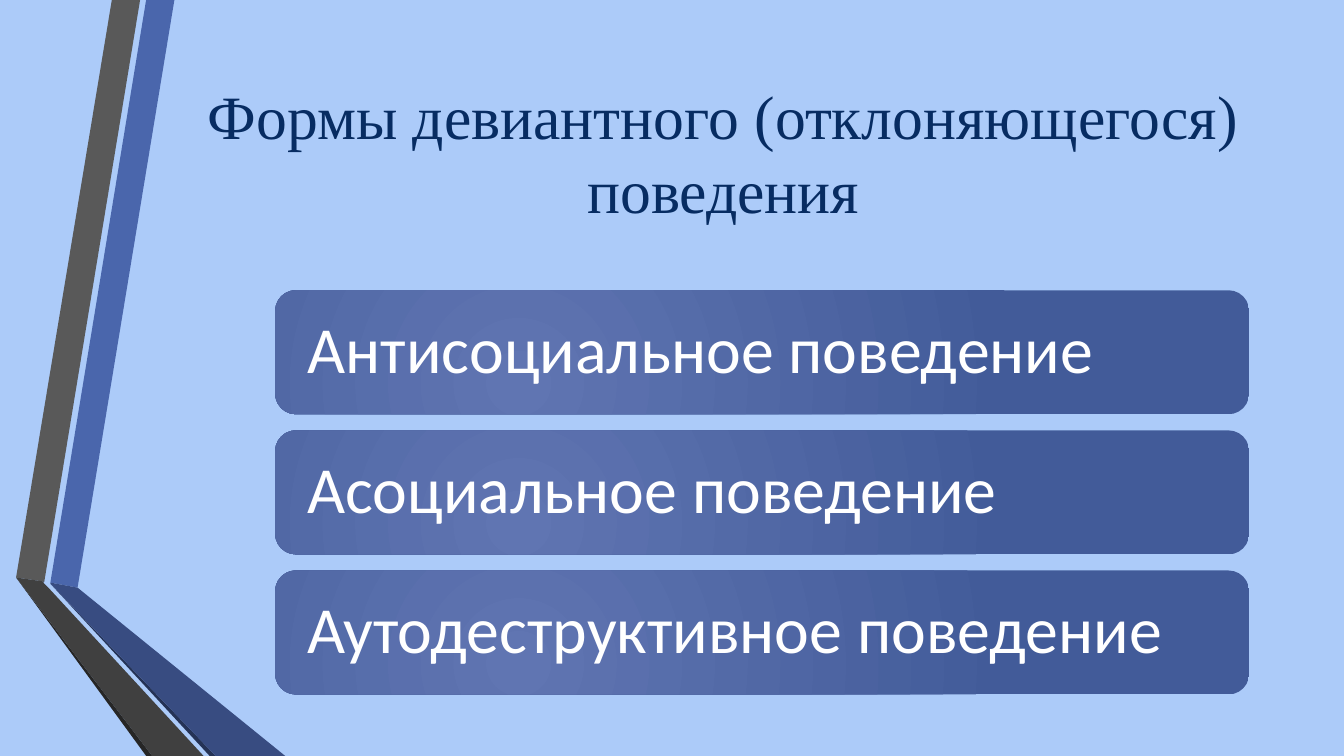
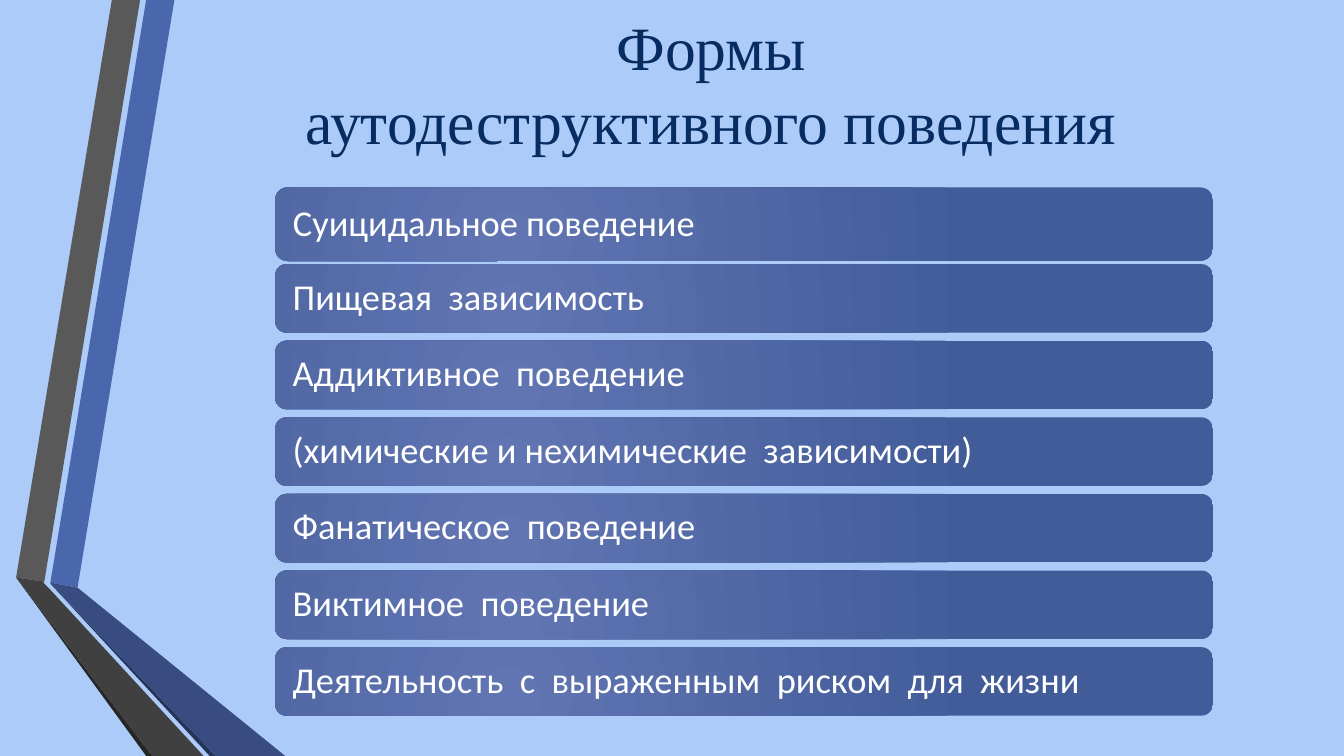
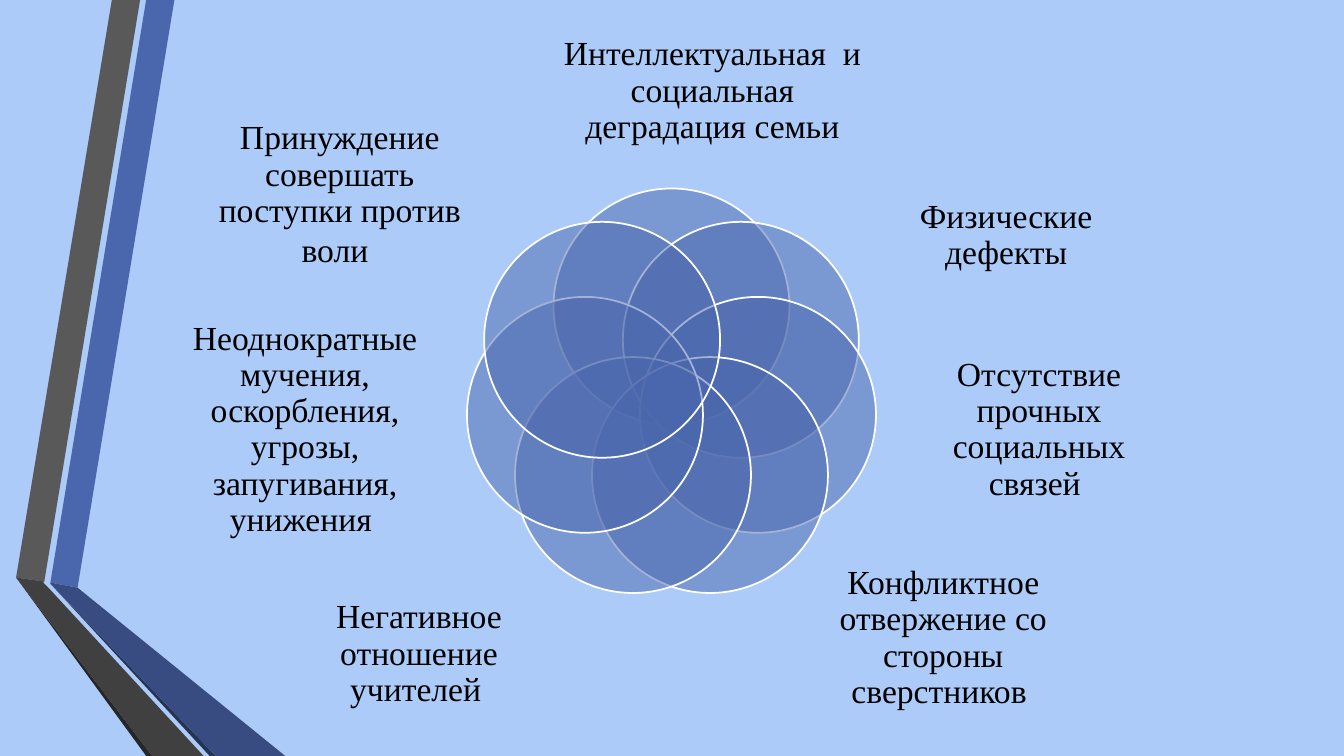
import math

from pptx import Presentation, util as u
from pptx.dml.color import RGBColor
from pptx.enum import shapes, text
from pptx.oxml import ns, parse_xml

COLORS = {
    "background": "ACCBF9", "title": "072C62", "white": "FFFFFF", "black": "000000",
    "blue": "4A66AC", "blue_fold": "384C81", "blue_edge": "253356",
    "gray": "595959", "gray_fold": "404040", "gray_edge": "262626",
    "bar_light": "6075B2", "bar_dark": "425B99",
}

# Folded ribbons at the left edge, from back to front
RIBBONS = [
    ("blue", [(0.5, 5.78), (0.77, 5.83), (1.73, 0), (1.45, 0)]),
    ("gray", [(1.39, 0), (1.11, 0), (0.16, 5.73), (0.44, 5.77)]),
    ("gray_edge", [(0.16, 5.73), (1.45, 7.5), (1.51, 7.5)]),
    ("blue_edge", [(0.5, 5.79), (2.08, 7.5), (2.14, 7.5)]),
    ("blue_fold", [(0.5, 5.79), (2.14, 7.5), (2.83, 7.5), (0.77, 5.83), (0.5, 5.78)]),
    ("gray_fold", [(2.02, 7.5), (0.48, 5.83), (0.43, 5.78), (0.44, 5.77),
                   (0.16, 5.73), (1.51, 7.5)]),
]

SERIF, SANS = "Times New Roman", "Calibri"
TITLE = {"name": SERIF, "size": 44, "color": "title"}
LABEL = {"name": SERIF, "size": 24, "color": "black"}
CENTER, LEFT = text.PP_ALIGN.CENTER, text.PP_ALIGN.LEFT


def rgb(name):
    return RGBColor.from_string(COLORS[name])


def set_all(target, values):
    for name, value in values.items():
        setattr(target, name, value)


class Deck:
    def __init__(self):
        self.presentation = Presentation()
        set_all(self.presentation, {"slide_width": u.Inches(13.33),
                                    "slide_height": u.Inches(7.5)})
        fill = self.presentation.slide_master.background.fill
        fill.solid()
        fill.fore_color.rgb = rgb("background")
        self.slide = None

    def new_slide(self):
        self.slide = self.presentation.slides.add_slide(self.presentation.slide_layouts[6])
        for color, points in RIBBONS:
            self.ribbon(color, points)

    def ribbon(self, color, points):
        start, *rest = [(u.Inches(x), u.Inches(y)) for x, y in points]
        builder = self.slide.shapes.build_freeform(*start, scale=1.0)
        builder.add_line_segments(rest, close=True)
        shape = builder.convert_to_shape()
        shape.shadow.inherit = False
        shape.fill.solid()
        shape.fill.fore_color.rgb = rgb(color)
        shape.line.fill.background()

    def shape(self, kind, box):
        shape = self.slide.shapes.add_shape(kind, *map(u.Inches, box))
        shape.shadow.inherit = False
        return shape

    def set_text(self, shape, words, font, align, insets, spacing=1.0, tail=None):
        """Fill a shape with one paragraph; tail is the size of its last character."""
        sides = ("margin_left", "margin_top", "margin_right", "margin_bottom")
        set_all(shape.text_frame, {
            "word_wrap": True, "vertical_anchor": text.MSO_ANCHOR.MIDDLE,
            **{side: u.Inches(inset) for side, inset in zip(sides, insets)}})
        paragraph = shape.text_frame.paragraphs[0]
        set_all(paragraph, {"alignment": align, "line_spacing": spacing})
        paragraph.text = words[:-1] if tail else words
        if tail:
            paragraph.add_run().text = words[-1]
        for run in paragraph.runs:
            set_all(run.font, {"name": font["name"], "size": u.Pt(font["size"])})
            run.font.color.rgb = rgb(font["color"])
        if tail:
            paragraph.runs[-1].font.size = u.Pt(tail)

    def title(self, words, box):
        shape = self.slide.shapes.add_textbox(*map(u.Inches, box))
        self.set_text(shape, words, TITLE, CENTER, (0.1, 0.05, 0.1, 0.05))

    def label(self, words, box, tail=None):
        shape = self.slide.shapes.add_textbox(*map(u.Inches, box))
        self.set_text(shape, words, LABEL, CENTER, (0, 0, 0, 0), 0.9, tail)

    def bar(self, words, box, size, inset):
        shape = self.shape(shapes.MSO_SHAPE.ROUNDED_RECTANGLE, box)
        shape.line.fill.background()
        shape.fill.gradient()
        for stop, color in zip(shape.fill.gradient_stops, ("bar_light", "bar_dark")):
            stop.color.rgb = rgb(color)
        # Radial instead of linear gradient
        gradient = shape.element.spPr.find(ns.qn("a:gradFill"))
        gradient.replace(gradient.find(ns.qn("a:lin")), parse_xml(
            f'<a:path {ns.nsdecls("a")} path="circle">'
            '<a:fillToRect l="50000" t="100000" r="100000" b="50000"/></a:path>'))
        font = {"name": SANS, "size": size, "color": "white"}
        self.set_text(shape, words, font, LEFT, (inset, 0.1, inset, 0.1), 0.9)

    def circle(self, center_x, center_y, diameter):
        radius = diameter / 2
        shape = self.shape(shapes.MSO_SHAPE.OVAL,
                           (center_x - radius, center_y - radius, diameter, diameter))
        shape.fill.solid()
        shape.fill.fore_color.rgb = rgb("blue")
        color = shape.element.spPr.find(ns.qn("a:solidFill"))[0]
        color.append(parse_xml(f'<a:alpha {ns.nsdecls("a")} val="50000"/>'))
        shape.line.color.rgb = rgb("white")
        shape.line.width = u.Pt(1.25)


def main():
    deck = Deck()

    # Forms of deviant behaviour
    deck.new_slide()
    deck.title("Формы девиантного (отклоняющегося) поведения", (1.95, 0.52, 10.45, 1.97))
    forms = ["Антисоциальное поведение", "Асоциальное поведение",
             "Аутодеструктивное поведение"]
    for row, words in enumerate(forms):
        deck.bar(words, (2.73, 2.88 + 1.39 * row, 9.66, 1.23), 47, 0.26)

    # Forms of self-destructive behaviour
    deck.new_slide()
    deck.title(" Формы \nаутодеструктивного поведения", (2.41, 0, 9.29, 1.65))
    forms = [
        "Суицидальное поведение ",
        "Пищевая  зависимость ",
        "Аддиктивное  поведение ",
        "(химические и нехимические  зависимости)",
        "Фанатическое  поведение ",
        "Виктимное  поведение ",
        "Деятельность  с  выраженным  риском  для  жизни ",
    ]
    for row, words in enumerate(forms):
        height = 0.68 if row else 0.73
        deck.bar(words, (2.73, 1.86 + 0.76 * row, 9.3, height), 26, 0.14)

    # Causes around a ring of overlapping circles
    deck.new_slide()
    causes = [
        ("Интеллектуальная  и социальная деградация семьи", (5.49, 0.29, 3.15, 1.23), None),
        ("Физические дефекты", (8.71, 1.55, 2.54, 1.58), None),
        ("Отсутствие прочных социальных связей ", (9.06, 3.42, 2.49, 1.69), None),
        ("Конфликтное отвержение со стороны сверстников ", (8.01, 5.56, 2.69, 1.54), None),
        ("Негативное отношение учителей ", (2.81, 5.72, 2.69, 1.54), 19),
        ("Неоднократные мучения, оскорбления, угрозы, запугивания, унижения ",
         (1.78, 3.42, 2.49, 1.69), None),
        ("Принуждение совершать поступки против воли ", (2.1, 1.15, 2.54, 1.58), 27),
    ]
    for index, (words, box, tail) in enumerate(causes):
        angle = 2 * math.pi * index / len(causes)
        deck.circle(6.66 + 0.88 * math.sin(angle), 3.92 - 0.88 * math.cos(angle), 2.34)
        deck.label(words, box, tail)

    deck.presentation.save("out.pptx")


if __name__ == "__main__":
    main()
